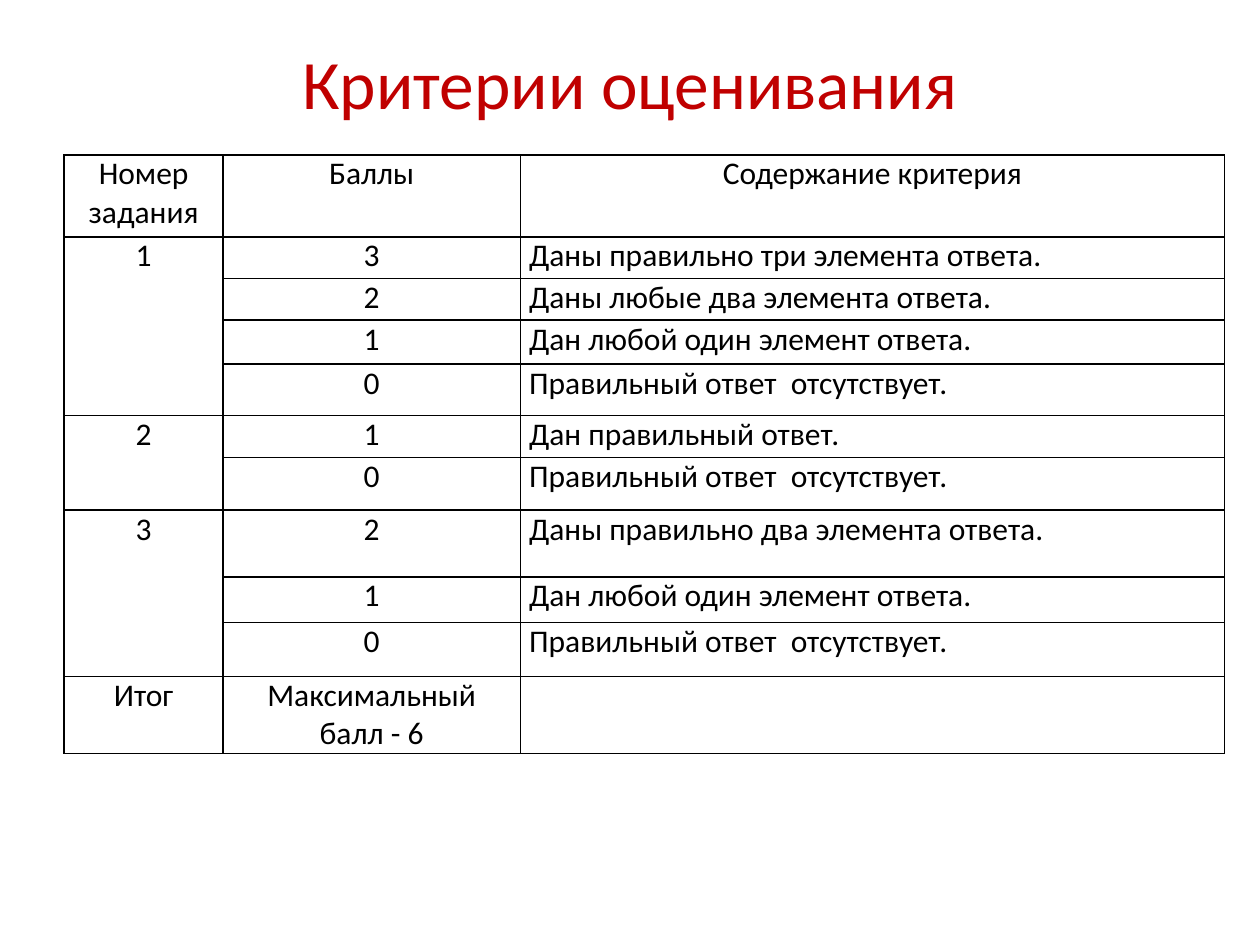
"""Build a slide with a table of grading criteria."""
from lxml.etree import SubElement
from pptx import Presentation
from pptx.dml.color import RGBColor
from pptx.enum.text import MSO_ANCHOR, PP_ALIGN
from pptx.oxml.ns import qn
from pptx.util import Inches, Pt

RED = RGBColor(0xC0, 0x00, 0x00)
BLACK = RGBColor(0x00, 0x00, 0x00)
FONT = "Calibri"

TITLE = "Критерии оценивания"
HEADER = ("Номер задания", "Баллы", "Содержание критерия")
NO_ANSWER = "Правильный ответ  отсутствует."
ONE_ELEMENT = "Дан любой один элемент ответа."
TASKS = [
    ("1", [
        ("3", "Даны правильно три элемента ответа."),
        ("2", "Даны любые два элемента ответа."),
        ("1", ONE_ELEMENT),
        ("0", NO_ANSWER),
    ]),
    ("2", [("1", "Дан правильный ответ."), ("0", NO_ANSWER)]),
    ("3", [
        ("2", "Даны правильно два элемента ответа."),
        ("1", ONE_ELEMENT),
        ("0", NO_ANSWER),
    ]),
]
TOTAL = ("Итог", "Максимальный балл - 6", "")
COLUMN_WIDTHS = (1.26, 2.36, 5.59)
ROW_HEIGHTS = (0.65, 0.33, 0.33, 0.35, 0.41, 0.33, 0.42, 0.53, 0.36, 0.43, 0.61)


def format_paragraph(paragraph, size, color, alignment):
    paragraph.alignment = alignment
    paragraph.font.size = Pt(size)
    for run in paragraph.runs:
        run.font.name = FONT
        run.font.size = Pt(size)
        run.font.color.rgb = color


def add_borders(cell):
    properties = cell._tc.get_or_add_tcPr()
    for position, side in enumerate(("lnL", "lnR", "lnT", "lnB")):
        line = properties.makeelement(qn(f"a:{side}"), {"w": str(Pt(1))})
        fill = SubElement(line, qn("a:solidFill"))
        SubElement(fill, qn("a:srgbClr"), val=str(BLACK))
        properties.insert(position, line)


def add_title(slide):
    box = slide.shapes.add_textbox(Inches(0.5), Inches(0.3), Inches(9), Inches(0.69))
    frame = box.text_frame
    frame.word_wrap = True
    frame.vertical_anchor = MSO_ANCHOR.MIDDLE
    frame.text = TITLE
    format_paragraph(frame.paragraphs[0], 39.6, RED, PP_ALIGN.CENTER)


def add_criteria_table(slide):
    rows = [HEADER]
    spans = []
    for number, criteria in TASKS:
        spans.append((len(rows), len(rows) + len(criteria) - 1))
        for index, (points, criterion) in enumerate(criteria):
            rows.append((number if index == 0 else "", points, criterion))
    rows.append(TOTAL)

    table = slide.shapes.add_table(
        len(rows), len(HEADER), Inches(0.51), Inches(1.23),
        Inches(sum(COLUMN_WIDTHS)), Inches(sum(ROW_HEIGHTS)),
    ).table
    table.first_row = False
    table.horz_banding = False
    for column, width in zip(table.columns, COLUMN_WIDTHS):
        column.width = Inches(width)
    for row, height in zip(table.rows, ROW_HEIGHTS):
        row.height = Inches(height)

    for row_index, values in enumerate(rows):
        for column_index, value in enumerate(values):
            cell = table.cell(row_index, column_index)
            cell.text = value
            cell.fill.background()
            cell.margin_left = cell.margin_right = Inches(0.07)
            cell.margin_top = cell.margin_bottom = 0
            is_criterion = column_index == 2 and row_index > 0
            alignment = PP_ALIGN.LEFT if is_criterion else PP_ALIGN.CENTER
            format_paragraph(cell.text_frame.paragraphs[0], 18, BLACK, alignment)
            add_borders(cell)
    for first, last in spans:
        table.cell(first, 0).merge(table.cell(last, 0))


def main():
    presentation = Presentation()
    presentation.slide_width = Inches(10)
    presentation.slide_height = Inches(7.5)
    slide = presentation.slides.add_slide(presentation.slide_layouts[6])
    add_title(slide)
    add_criteria_table(slide)
    presentation.save("out.pptx")


if __name__ == "__main__":
    main()
